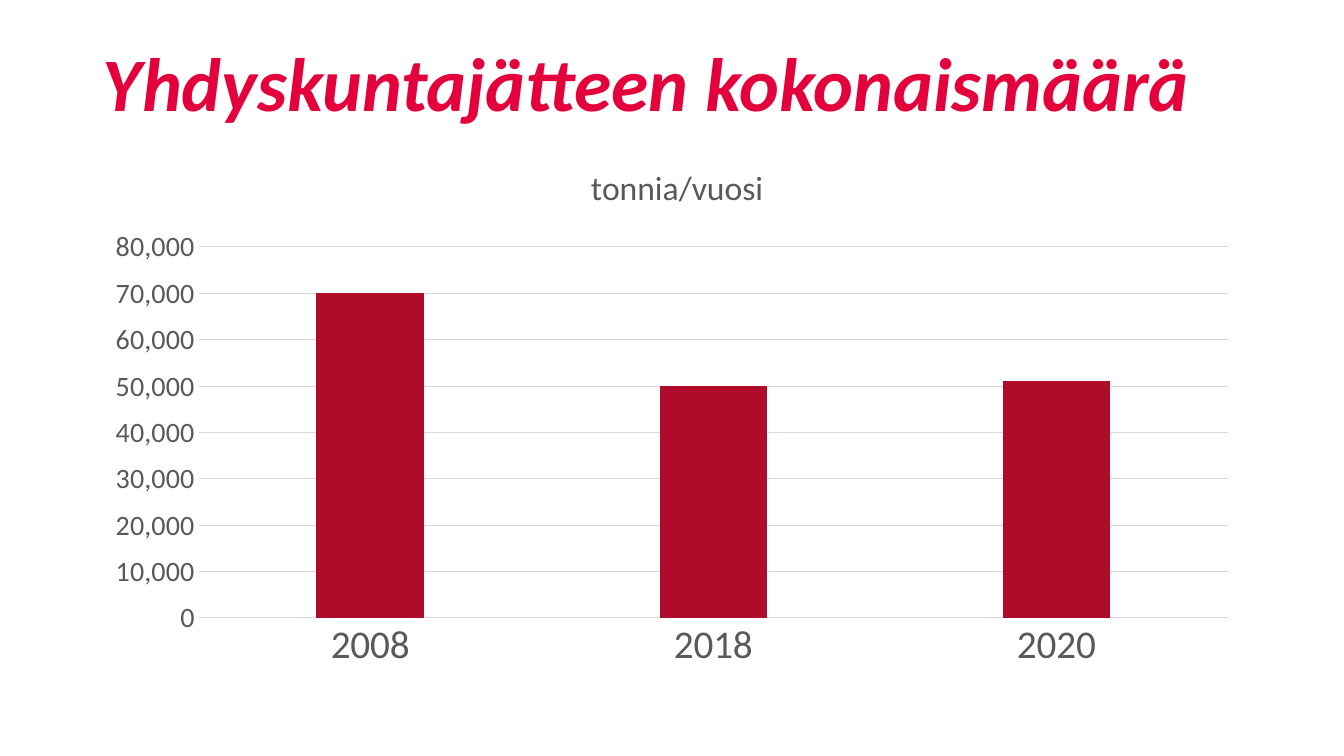
import pptx
import pptx.chart.data
import pptx.dml.color
import pptx.enum.chart
import pptx.enum.text
import pptx.oxml
import pptx.oxml.ns
import pptx.util
from pptx.util import Inches


def colour(value):
    return pptx.dml.color.RGBColor.from_string(value)


def format_font(font, size, color, bold=False, italic=False, name="Calibri"):
    font.name = name
    font.size = pptx.util.Pt(size)
    font.bold = bold
    font.italic = italic
    font.color.rgb = colour(color)


def write_text(frame, text, **font_format):
    paragraph = frame.paragraphs[0]
    run = paragraph.add_run()
    run.text = text
    format_font(run.font, **font_format)
    return paragraph


def place_chart_part(part, position, **settings):
    for layout in part.findall(pptx.oxml.ns.qn("c:layout")):
        part.remove(layout)
    settings = {**settings, "xMode": "edge", "yMode": "edge"}
    children = "".join(f'<c:{key} val="{value}"/>' for key, value in settings.items())
    part.insert(position, pptx.oxml.parse_xml(
        f'<c:layout {pptx.oxml.ns.nsdecls("c")}>'
        f"<c:manualLayout>{children}</c:manualLayout></c:layout>"
    ))
    return part[position][0]


def add_bounds(manual_layout, **bounds):
    for key, value in bounds.items():
        manual_layout.append(pptx.oxml.parse_xml(
            f'<c:{key} {pptx.oxml.ns.nsdecls("c")} val="{value:.4f}"/>'
        ))


class WasteSlide:
    title_color = "E4003A"
    bar_color = "AF0B2B"
    label_color = "595959"
    grid_color = "D9D9D9"

    def __init__(self, presentation):
        self.slide = presentation.slides.add_slide(presentation.slide_layouts[5])

    def title(self, text, left, top, width, height):
        shape = self.slide.shapes.title
        shape.left, shape.top = Inches(left), Inches(top)
        shape.width, shape.height = Inches(width), Inches(height)
        frame = shape.text_frame
        frame.word_wrap = True
        frame.auto_size = pptx.enum.text.MSO_AUTO_SIZE.NONE
        frame.vertical_anchor = pptx.enum.text.MSO_ANCHOR.BOTTOM
        paragraph = write_text(frame, text, size=54, color=self.title_color, bold=True, italic=True)
        paragraph.alignment = pptx.enum.text.PP_ALIGN.LEFT
        paragraph.line_spacing = 0.9

    def column_chart(self, heading, tonnes_by_year, left, top, width, height):
        data = pptx.chart.data.CategoryChartData(number_format="#,##0")
        data.categories = list(tonnes_by_year)
        data.add_series(heading, list(tonnes_by_year.values()))
        chart = self.slide.shapes.add_chart(
            pptx.enum.chart.XL_CHART_TYPE.COLUMN_CLUSTERED,
            Inches(left), Inches(top), Inches(width), Inches(height), data,
        ).chart
        format_font(chart.font, 20, "000000")
        chart.has_legend = False
        chart.has_title = True
        write_text(chart.chart_title.text_frame, heading, size=24, color=self.label_color)
        chart.chart_title.include_in_layout = False

        plot = chart.plots[0]
        plot.gap_width = 219
        plot.overlap = -27
        plot.vary_by_categories = False
        fill = plot.series[0].format.fill
        fill.solid()
        fill.fore_color.rgb = colour(self.bar_color)

        self.axis(chart.category_axis, 28)
        self.line(chart.category_axis.format.line)
        values = chart.value_axis
        self.axis(values, 20)
        values.format.line.fill.background()
        values.minimum_scale, values.maximum_scale, values.major_unit = 0, 80000, 10000
        values.has_major_gridlines = True
        self.line(values.major_gridlines.format.line)

        chart_element = chart._chartSpace.chart
        heading_layout = place_chart_part(chart_element.find(pptx.oxml.ns.qn("c:title")), 1)
        add_bounds(heading_layout, x=(5.8 - left) / width, y=(1.58 - top) / height)
        plot_layout = place_chart_part(chart_element.plotArea, 0, layoutTarget="inner")
        add_bounds(plot_layout, x=(1.97 - left) / width, y=(2.45 - top) / height,
                   w=10.21 / width, h=3.68 / height)

    def axis(self, axis, size):
        axis.major_tick_mark = pptx.enum.chart.XL_TICK_MARK.NONE
        axis.minor_tick_mark = pptx.enum.chart.XL_TICK_MARK.NONE
        format_font(axis.tick_labels.font, size, self.label_color)

    def line(self, line):
        line.color.rgb = colour(self.grid_color)
        line.width = pptx.util.Pt(0.75)


def main():
    presentation = pptx.Presentation()
    presentation.slide_width = Inches(13.33)
    presentation.slide_height = Inches(7.5)
    waste = WasteSlide(presentation)
    waste.title("Yhdyskuntajätteen kokonaismäärä", 0.92, 0.3, 11.5, 1.02)
    waste.column_chart(
        "tonnia/vuosi", {"2008": 70000, "2018": 50000, "2020": 51000},
        0.92, 1.51, 11.5, 5.24,
    )
    presentation.save("out.pptx")


if __name__ == "__main__":
    main()
